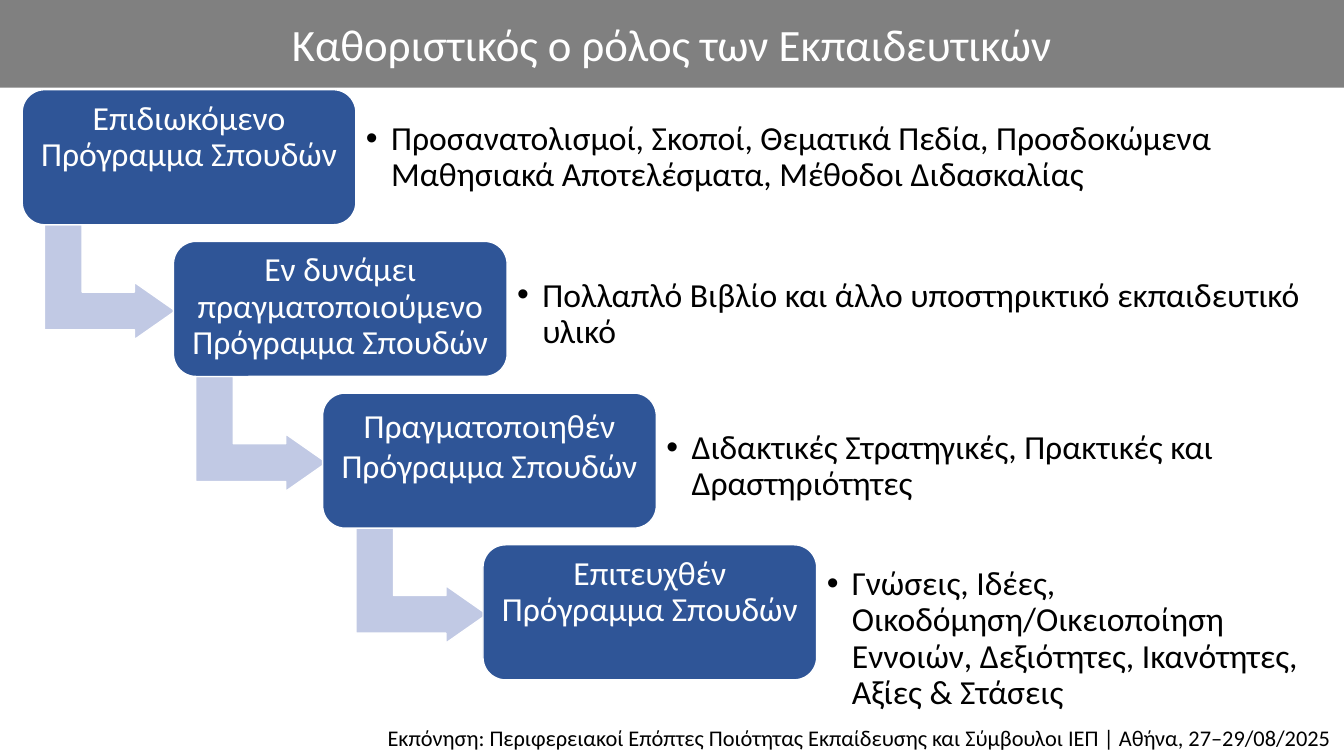
from pptx import Presentation, util as u
from pptx.dml.color import RGBColor
from pptx.enum import shapes, text
from lxml import etree

TITLE = "Καθοριστικός ο ρόλος των Εκπαιδευτικών"
FOOTER = ("Εκπόνηση: Περιφερειακοί Επόπτες Ποιότητας Εκπαίδευσης και Σύμβουλοι ΙΕΠ"
          " | Αθήνα, 27–29/08/2025")
# stage, its line spacing, left, details, details' top, details' height, anchor
STAGES = [
    ("Επιδιωκόμενο Πρόγραμμα Σπουδών", 0.9, 0.22,
     "Προσανατολισμοί, Σκοποί, Θεματικά Πεδία, Προσδοκώμενα Μαθησιακά "
     "Αποτελέσματα, Μέθοδοι Διδασκαλίας", 1.15, 0.83, text.MSO_ANCHOR.MIDDLE),
    ("Εν δυνάμει πραγματοποιούμενο Πρόγραμμα Σπουδών", 0.9, 1.72,
     "Πολλαπλό Βιβλίο και άλλο υποστηρικτικό εκπαιδευτικό υλικό",
     2.71, 0.83, text.MSO_ANCHOR.TOP),
    ("Πραγματοποιηθέν Πρόγραμμα Σπουδών", 1.0, 3.2,
     "Διδακτικές Στρατηγικές, Πρακτικές και Δραστηριότητες",
     4.22, 0.83, text.MSO_ANCHOR.TOP),
    ("Επιτευχθέν Πρόγραμμα Σπουδών", 0.9, 4.79,
     "Γνώσεις, Ιδέες, Οικοδόμηση/Οικειοποίηση Εννοιών, Δεξιότητες, "
     "Ικανότητες, Αξίες & Στάσεις", 5.57, 1.56, text.MSO_ANCHOR.TOP),
]
ARROW_LEFTS = [0.52, 2.02, 3.61]
FIRST_TOP, STEP = 0.89, 1.505
STAGE_W, STAGE_H = 3.31, 1.34
ARROW_DROP, ARROW_W, ARROW_H = 1.26, 1.14, 1.3
DETAILS_RIGHT = 13.11
BLUE, LILAC, GRAY, WHITE, BLACK = "2F5597", "C1C9E4", "808080", "FFFFFF", "000000"


def paint(color_holder, color):
    """Give a fill a solid colour."""
    color_holder.solid()
    color_holder.fore_color.rgb = RGBColor.from_string(color)


def place(shape, left, top, width, height):
    shape.left, shape.top = u.Inches(left), u.Inches(top)
    shape.width, shape.height = u.Inches(width), u.Inches(height)


def write(shape, words, size, color, align, spacing=1.0, anchor=text.MSO_ANCHOR.TOP):
    """Fill a shape with one formatted paragraph and return it."""
    frame = shape.text_frame
    frame.word_wrap = True
    frame.auto_size = text.MSO_AUTO_SIZE.NONE
    frame.vertical_anchor = anchor
    paragraph = frame.paragraphs[0]
    paragraph.text = words
    paragraph.alignment = align
    paragraph.line_spacing = spacing
    paragraph.space_before = u.Pt(0)
    font = paragraph.font
    font.name, font.size, font.bold = "Calibri", u.Pt(size), False
    font.color.rgb = RGBColor.from_string(color)
    return paragraph


def add_bullet(paragraph):
    props = paragraph._p.get_or_add_pPr()
    props.set("marL", str(u.Inches(0.25)))
    props.set("indent", str(-u.Inches(0.25)))
    namespace = props.nsmap["a"]
    font = etree.Element(f"{{{namespace}}}buFont", typeface="Arial")
    bullet = etree.Element(f"{{{namespace}}}buChar", char="•")
    run_defaults = props.find(f"{{{namespace}}}defRPr")
    run_defaults.addprevious(font)
    run_defaults.addprevious(bullet)


def add_filled(slide, preset, box, color):
    """Add a preset shape with a thin white outline."""
    shape = slide.shapes.add_shape(preset, *map(u.Inches, box))
    shape.shadow.inherit = False
    paint(shape.fill, color)
    paint(shape.line.fill, WHITE)
    shape.line.width = u.Pt(1)
    return shape


def main():
    deck = Presentation()
    deck.slide_width, deck.slide_height = u.Inches(13.33), u.Inches(7.5)
    slide = deck.slides.add_slide(deck.slide_layouts.get_by_name("Comparison"))
    title, *details_boxes = slide.placeholders

    place(title, 0, 0, 13.33, 0.87)
    paint(title.fill, GRAY)
    write(title, TITLE, 32, WHITE, text.PP_ALIGN.CENTER, anchor=text.MSO_ANCHOR.MIDDLE)

    for i, (stage, spacing, left, details, top, height, anchor) in enumerate(STAGES):
        stage_top = FIRST_TOP + i * STEP
        if i < len(ARROW_LEFTS):
            arrow = add_filled(slide, shapes.MSO_SHAPE.BENT_UP_ARROW,
                               (ARROW_LEFTS[i], stage_top + ARROW_DROP, ARROW_W, ARROW_H),
                               LILAC)
            arrow.rotation = 90
            for k, value in enumerate((0.328, 0.25, 0.358)):
                arrow.adjustments[k] = value
        stage_box = add_filled(slide, shapes.MSO_SHAPE.ROUNDED_RECTANGLE,
                               (left, stage_top, STAGE_W, STAGE_H), BLUE)
        write(stage_box, stage, 24, WHITE, text.PP_ALIGN.CENTER, spacing)

        details_left = left + STAGE_W
        place(details_boxes[i], details_left, top, DETAILS_RIGHT - details_left, height)
        add_bullet(write(details_boxes[i], details, 24, BLACK, text.PP_ALIGN.LEFT,
                         0.9, anchor))

    footer = slide.shapes.add_textbox(*map(u.Inches, (0.03, 7.11, 13.27, 0.39)))
    paint(footer.fill, WHITE)
    write(footer, FOOTER, 16, BLACK, text.PP_ALIGN.RIGHT, 1.1)

    deck.save("out.pptx")


if __name__ == "__main__":
    main()
